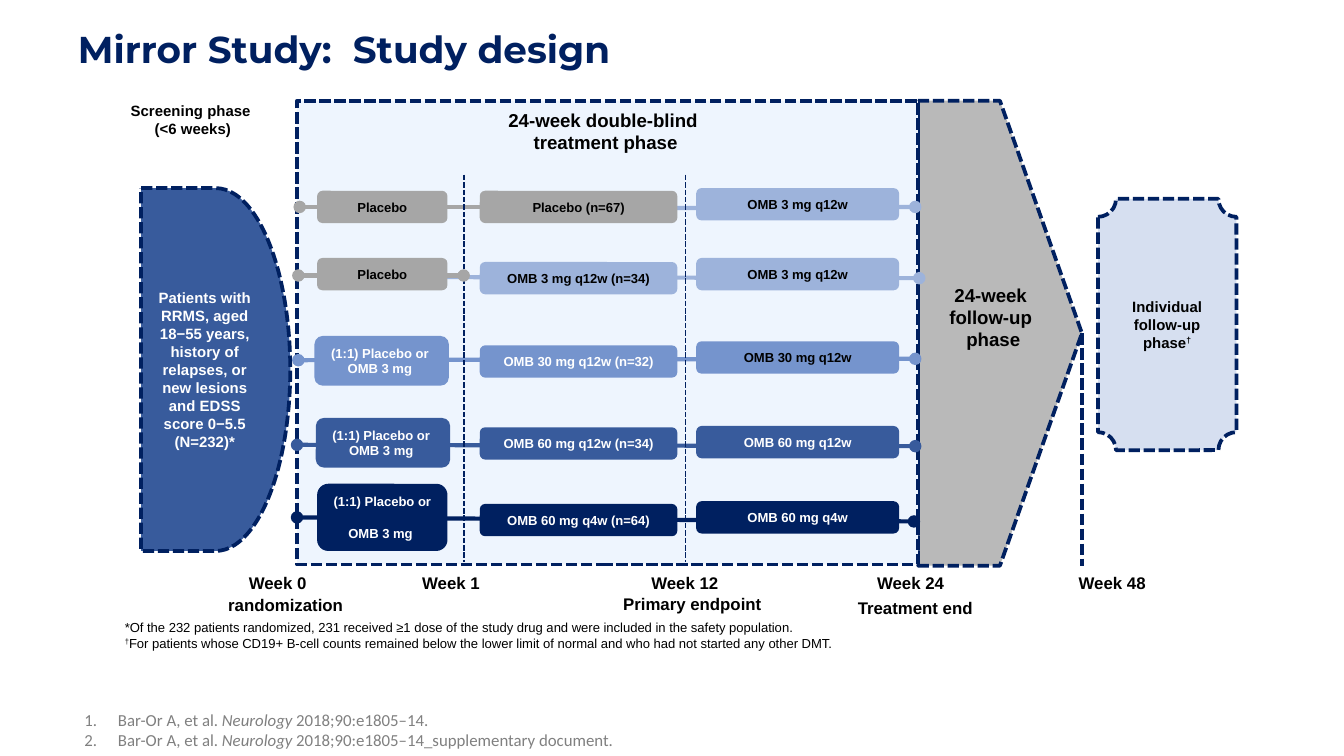
from pptx import Presentation
from pptx.dml.color import RGBColor
from pptx.enum import dml, shapes, text
from pptx.oxml.ns import qn
from pptx.util import Inches, Pt
from lxml import etree

NAVY = RGBColor(0x00, 0x20, 0x60)
BLUE = RGBColor(0x38, 0x5B, 0x9C)
MID_BLUE = RGBColor(0x75, 0x94, 0xCD)
LIGHT_BLUE = RGBColor(0x9D, 0xB3, 0xDB)
PALE_BLUE = RGBColor(0xB6, 0xC6, 0xE4)
PANEL = RGBColor(0xEE, 0xF5, 0xFE)
SILVER = RGBColor(0xA6, 0xA6, 0xA6)
GRAY = RGBColor(0x80, 0x80, 0x80)
BLACK = RGBColor(0, 0, 0)
WHITE = RGBColor(0xFF, 0xFF, 0xFF)

KIND = shapes.MSO_SHAPE
TOP, MIDDLE = text.MSO_ANCHOR.TOP, text.MSO_ANCHOR.MIDDLE
CENTER, LEFT = text.PP_ALIGN.CENTER, text.PP_ALIGN.LEFT


def add_span(para, words, size, color, bold=False, italic=False,
             font="Arial", raised=False):
    """Add a run, with a line break of the same size at each newline."""
    for index, line in enumerate(words.split("\n")):
        if index:
            para.add_line_break()
            etree.SubElement(para._p[-1], qn("a:rPr"), sz=str(size * 100))
        span = para.add_run()
        span.text = line
        span.font.name, span.font.size = font, Pt(size)
        span.font.bold, span.font.italic = bold, italic
        span.font.color.rgb = color
        if raised:
            span.font._element.set("baseline", "30000")


def prepare(box, anchor=TOP, inset=None):
    frame = box.text_frame
    frame.word_wrap = True
    frame.vertical_anchor = anchor
    if inset is not None:
        frame.margin_left = frame.margin_right = Inches(inset)
        frame.margin_top = frame.margin_bottom = Inches(inset)
    return frame.paragraphs[0]


def add_text(page, at, anchor=TOP, inset=None, align=LEFT):
    """Add an empty text box and return its first paragraph and frame."""
    box = page.shapes.add_textbox(*map(Inches, at))
    para = prepare(box, anchor, inset)
    para.alignment = align
    return para, box.text_frame


def add_label(page, at, words, size, anchor=TOP):
    para, frame = add_text(page, at, anchor, align=CENTER)
    add_span(para, words, size, BLACK, bold=True)
    return frame


def style_dashes(line, width):
    line.color.rgb = NAVY
    line.width = Pt(width)
    line.dash_style = dml.MSO_LINE.SQUARE_DOT


def add_block(page, kind, at, fill, dashed=False, opacity=None):
    box = page.shapes.add_shape(kind, *map(Inches, at))
    box.shadow.inherit = False
    box.fill.solid()
    box.fill.fore_color.rgb = fill
    if opacity:
        color = box.fill._xPr.find(qn("a:solidFill"))[0]
        etree.SubElement(color, qn("a:alpha"), val=str(opacity * 1000))
    if dashed:
        style_dashes(box.line, 2)
    else:
        box.line.fill.background()
    return box


def add_dose(page, at, fill, words, color, anchor=MIDDLE):
    para = prepare(add_block(page, KIND.ROUNDED_RECTANGLE, at, fill), anchor)
    para.alignment = CENTER
    add_span(para, words, 7, color, bold=True)


def add_line(page, x1, y1, x2, y2):
    line = page.shapes.add_connector(
        shapes.MSO_CONNECTOR.STRAIGHT, *map(Inches, (x1, y1, x2, y2)))
    etree.SubElement(line._element.spPr, qn("a:effectLst"))
    return line


def add_dashed_line(page, x, y1, y2, width):
    line = add_line(page, x, y1, x, y2)
    style_dashes(line.line, width)
    return line


def add_arm_line(page, x1, y1, x2, y2, color):
    """Add a treatment line with a dot at both ends."""
    line = add_line(page, x1, y1, x2, y2).line
    line.color.rgb = color
    line.width = Pt(2.25)
    for end in ("a:headEnd", "a:tailEnd"):
        etree.SubElement(line._get_or_add_ln(), qn(end), type="oval")


def add_phases(page):
    # Enrolled patients
    patients = add_block(page, KIND.FLOWCHART_DELAY, (1.05, 1.4, 1.11, 2.7), BLUE, True)
    para = prepare(patients, MIDDLE)
    para.alignment = CENTER
    add_span(para, "Patients with RRMS, aged 18−55 years, history of relapses, "
             "or new lesions and EDSS score 0−5.5\n(N=232)*", 8, WHITE, bold=True)

    # Individual follow-up
    plaque = add_block(page, KIND.PLAQUE, (8.17, 1.48, 1.03, 1.87), PALE_BLUE, True, 55)
    plaque.adjustments[0] = 0.13
    para = prepare(plaque, MIDDLE, 0)
    para.alignment = CENTER
    add_span(para, "Individual follow-up phase", 8, BLACK, bold=True)
    add_span(para, "†", 8, BLACK, bold=True, raised=True)

    # 24-week phases, with the week 48 marker at the arrow tip
    arrow = add_block(page, KIND.PENTAGON, (6.83, 0.75, 1.22, 3.46), GRAY, True, 55)
    add_block(page, KIND.RECTANGLE, (2.21, 0.75, 4.62, 3.45), PANEL, True)
    add_dashed_line(page, 8.05, 2.48, 4.21, 2).begin_connect(arrow, 3)
    add_label(page, (2.56, 0.76, 3.89, 0.44), "24-week double-blind \ntreatment phase", 10)
    frame = add_label(page, (6.45, 2.06, 1.88, 0.61), "24-week ", 10)
    para = frame.add_paragraph()
    para.alignment = CENTER
    add_span(para, "follow-up \nphase", 10, BLACK, bold=True)
    add_label(page, (0.83, 0.71, 1.21, 0.37), "Screening phase \n(<6 weeks)", 8)


def add_arms(page):
    # Treatment lines and week markers
    for line in ((2.21, 3.85, 6.8, 3.88, NAVY), (2.21, 3.31, 6.81, 3.32, BLUE),
                 (2.22, 2.68, 6.81, 2.67, MID_BLUE),
                 (2.41, 2.06, 6.84, 2.07, LIGHT_BLUE),
                 (4.55, 1.55, 6.81, 1.54, LIGHT_BLUE),
                 (2.23, 1.54, 4.54, 1.54, SILVER)):
        add_arm_line(page, *line)
    for x in (3.45, 5.1):
        add_dashed_line(page, x, 1.3, 4.18, 1)
    add_arm_line(page, 2.22, 2.05, 3.45, 2.05, SILVER)

    # First dose: place, fill, words, text colour
    mixed = "(1:1) Placebo or \nOMB 3 mg "
    for dose in (((2.36, 1.42, 0.97, 0.24), SILVER, "Placebo", BLACK),
                 ((2.36, 1.92, 0.97, 0.24), SILVER, "Placebo", BLACK),
                 ((2.34, 2.5, 1, 0.37), MID_BLUE, mixed, WHITE),
                 ((2.35, 3.11, 1, 0.37), BLUE, mixed, WHITE),
                 ((2.36, 3.6, 0.97, 0.5), NAVY, mixed, WHITE)):
        add_dose(page, *dose)

    # Weeks 1 to 12
    for top, fill, words, color in (
            (1.42, SILVER, "Placebo (n=67)", BLACK),
            (1.95, LIGHT_BLUE, "OMB 3 mg q12w (n=34)", BLACK),
            (2.57, MID_BLUE, "OMB 30 mg q12w (n=32)", WHITE),
            (3.18, BLUE, "OMB 60 mg q12w (n=34)", WHITE),
            (3.75, NAVY, "OMB 60 mg q4w (n=64)", WHITE)):
        add_dose(page, (3.57, top, 1.47, 0.24), fill, words, color)

    # Weeks 12 to 24
    for top, fill, words, color in (
            (1.4, LIGHT_BLUE, "OMB 3 mg q12w", BLACK),
            (1.92, LIGHT_BLUE, "OMB 3 mg q12w", BLACK),
            (2.54, MID_BLUE, "OMB 30 mg q12w", BLACK),
            (3.17, BLUE, "OMB 60 mg q12w", WHITE),
            (3.73, NAVY, "OMB 60 mg q4w", WHITE)):
        add_dose(page, (5.18, top, 1.51, 0.24), fill, words, color, TOP)


def add_timeline(page):
    for left, week in ((1.59, 0), (2.88, 1), (4.62, 12), (6.3, 24), (7.8, 48)):
        add_label(page, (left, 4.21, 0.95, 0.25), f"Week {week}", 9)
    for at, words in (((1.39, 4.42, 1.47, 0.16), "randomization"),
                      ((4.29, 4.42, 1.72, 0.14), "Primary endpoint"),
                      ((6.08, 4.45, 1.46, 0.14), "Treatment end")):
        add_label(page, at, words, 9, MIDDLE)


def add_notes_and_references(page):
    # Footnotes
    para, frame = add_text(page, (0.83, 4.56, 8.19, 0.34))
    add_span(para, "*Of the 232 patients randomized, 231 received ≥1 dose of the "
             "study drug and were included in the safety population.", 7, BLACK)
    para = frame.add_paragraph()
    add_span(para, "†", 7, BLACK, raised=True)
    add_span(para, "For patients whose CD19+ B-cell counts remained below the lower "
             "limit of normal and who had not started any other DMT.", 7, BLACK)

    # Numbered references
    para, frame = add_text(page, (0.53, 5.17, 5.3, 0.34))
    frame.margin_top = Inches(0.11)
    for para, ending in ((para, "."), (frame.add_paragraph(), "_supplementary document.")):
        props = para._p.get_or_add_pPr()
        props.set("marL", str(Inches(0.25)))
        props.set("indent", str(Inches(-0.25)))
        etree.SubElement(props, qn("a:buAutoNum"), type="arabicPeriod")
        for words, italic in (("Bar-Or A, et al. ", False), ("Neurology", True),
                              (" 2018;90:e1805–14" + ending, False)):
            add_span(para, words, 9, GRAY, italic=italic, font="Calibri")


def main():
    deck = Presentation()
    # Widescreen, 16:9
    deck.slide_width, deck.slide_height = Inches(10), Inches(10 * 9 / 16)
    page = deck.slides.add_slide(deck.slide_layouts[6])
    para, _ = add_text(page, (0.58, 0.23, 8.26, 0.58), inset=0)
    para.line_spacing = 0.9
    add_span(para, "Mirror Study:  Study design", 20, NAVY, bold=True, font="Montserrat")
    add_phases(page)
    add_arms(page)
    add_timeline(page)
    add_notes_and_references(page)
    deck.save("out.pptx")


if __name__ == "__main__":
    main()
